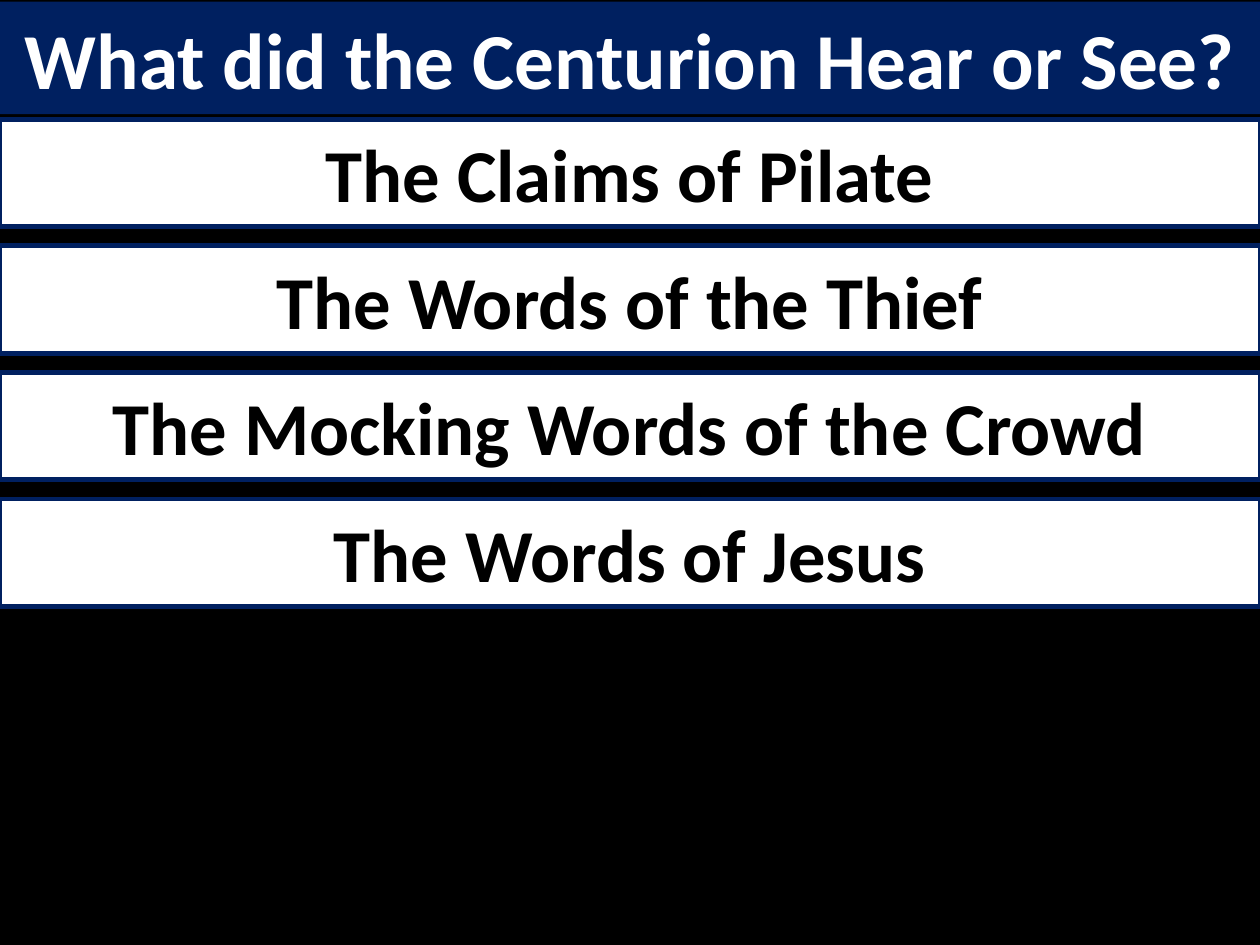
from pptx import Presentation
from pptx.dml.color import RGBColor
from pptx.enum import shapes, text
from pptx.util import Inches, Pt

COLORS = {"navy": "002060", "white": "FFFFFF", "black": "000000"}
WIDTH = 7.5
ANSWERS = [
    "The Claims of Pilate",
    "The Words of the Thief",
    "The Mocking Words of the Crowd",
    "The Words of Jesus",
]


def color(name):
    """Return the named palette colour."""
    return RGBColor.from_string(COLORS[name])


def set_fill(target, name):
    """Give a shape or background a solid palette fill."""
    target.fill.solid()
    target.fill.fore_color.rgb = color(name)


def set_text(sp, words, size, name):
    """Write one bold centred line in a shape."""
    tf = sp.text_frame
    frame = {
        "word_wrap": True,
        "auto_size": text.MSO_AUTO_SIZE.NONE,
        "vertical_anchor": text.MSO_ANCHOR.MIDDLE,
        "margin_left": Inches(0.1),
        "margin_right": Inches(0.1),
        "margin_top": Inches(0.05),
        "margin_bottom": Inches(0.05),
    }
    for key, value in frame.items():
        setattr(tf, key, value)
    p = tf.paragraphs[0]
    p.alignment = text.PP_ALIGN.CENTER
    r = p.add_run()
    r.text = words
    for key, value in {"name": "Calibri", "size": Pt(size), "bold": True}.items():
        setattr(r.font, key, value)
    r.font.color.rgb = color(name)


def add_title(s, left, top, width, height):
    """Place the question banner in its box."""
    sp = s.shapes.title
    box = {"left": left, "top": top, "width": width, "height": height}
    for key, value in box.items():
        setattr(sp, key, Inches(value))
    set_fill(sp, "navy")
    set_text(sp, "What did the Centurion Hear or See?", 34, "white")


def add_answers(s, left, top, width, height):
    """Spread the answer bars evenly over the box."""
    bar = 0.64
    step = (height - bar) / (len(ANSWERS) - 1)
    for i, answer in enumerate(ANSWERS):
        sp = s.shapes.add_shape(
            shapes.MSO_SHAPE.RECTANGLE,
            Inches(left), Inches(top + i * step), Inches(width), Inches(bar),
        )
        sp.shadow.inherit = False
        set_fill(sp, "white")
        sp.line.color.rgb = color("navy")
        sp.line.width = Pt(2)
        set_text(sp, answer, 32, "black")


def main():
    """Build and save the slide."""
    prs = Presentation()
    prs.slide_width, prs.slide_height = Inches(WIDTH), Inches(WIDTH * 3 / 4)
    s = prs.slides.add_slide(prs.slide_layouts[5])
    set_fill(s.background, "black")
    add_title(s, 0, 0.01, WIDTH, 0.67)
    add_answers(s, 0, 0.71, WIDTH, 2.9)
    prs.save("out.pptx")


if __name__ == "__main__":
    main()
